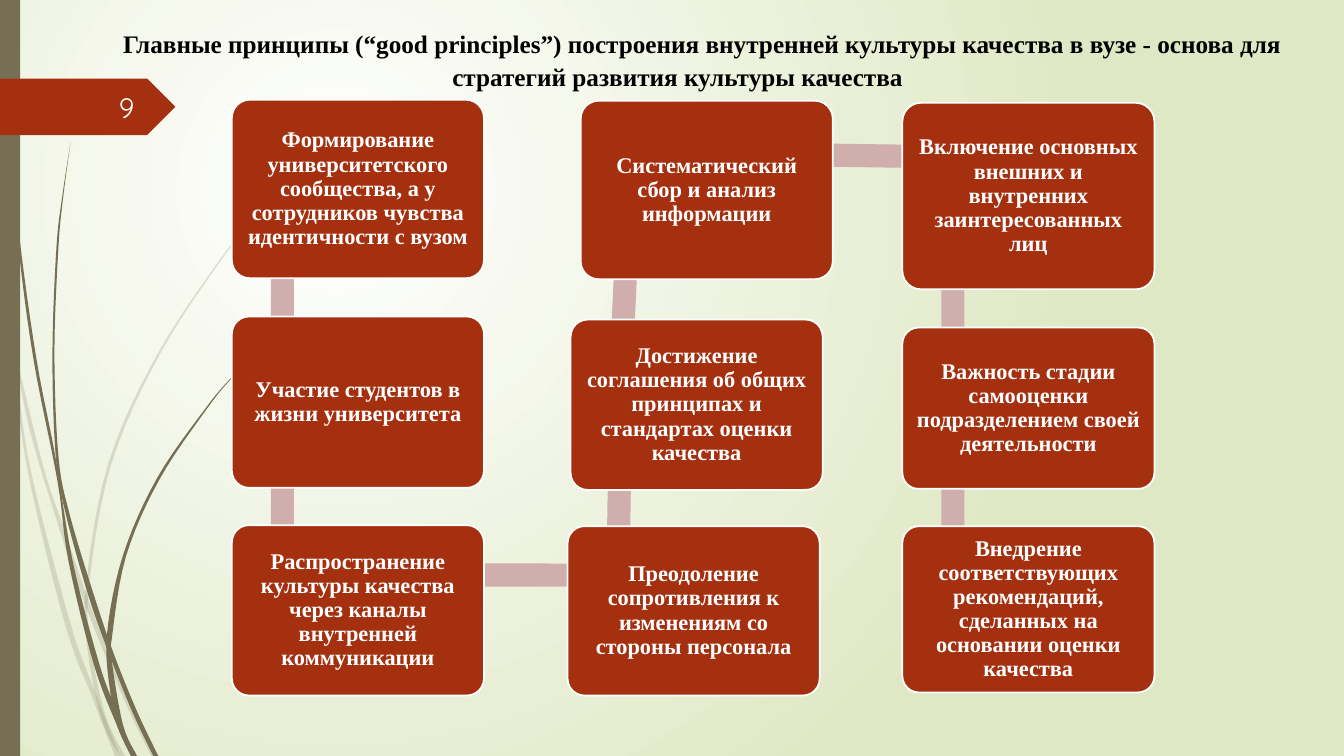
from math import atan2, degrees, hypot
from lxml.etree import SubElement
from pptx import Presentation
from pptx.dml.color import RGBColor
from pptx.enum.shapes import MSO_SHAPE
from pptx.enum.text import MSO_ANCHOR, PP_ALIGN
from pptx.oxml.ns import qn
from pptx.util import Inches, Pt

TITLE = ("Главные принципы (“good principles”) построения внутренней культуры "
         "качества в вузе - основа для стратегий развития культуры качества")
PRINCIPLES = [
    ("Формирование университетского сообщества, а у сотрудников чувства идентичности с вузом", 2.3, 0.99, 1.77),
    ("Участие студентов в жизни университета", 2.3, 3.14, 1.7),
    ("Распространение культуры качества через каналы внутренней коммуникации", 2.3, 5.21, 1.69),
    ("Преодоление сопротивления к изменениям со стороны персонала", 5.63, 5.22, 1.68),
    ("Достижение соглашения об общих принципах и стандартах оценки качества", 5.66, 3.17, 1.69),
    ("Систематический сбор и анализ информации", 5.76, 1, 1.77),
    ("Включение основных внешних и внутренних заинтересованных лиц", 8.95, 1.02, 1.85),
    ("Важность стадии самооценки подразделением своей деятельности", 8.95, 3.25, 1.6),
    ("Внедрение соответствующих рекомендаций, сделанных на основании оценки качества", 8.95, 5.22, 1.65),
]
BOX_WIDTH = 2.5
LINK_THICKNESS = 0.23
RUST, OLIVE, PINK, WHITE = "A53010", "766F54", "CFAEAB", "FFFFFF"

PALE_STRANDS = [
    ([(0, 2.99), (0.1, 3.44), (0.28, 4.7), (0.65, 6.21), (0.92, 6.93), (1.14, 7.5)],
     [(0, 2.82), (0.09, 3.22), (0.17, 3.76), (0.31, 4.69), (0.7, 6.19), (0.93, 6.83), (1.19, 7.5)]),
    ([(0.14, 3.45), (0.29, 4.25), (0.58, 5.22), (0.84, 5.99), (1.23, 6.94), (1.5, 7.5)],
     [(0.14, 3.45), (0.43, 4.63), (0.62, 5.2), (0.92, 6.07), (1.27, 6.92), (1.55, 7.5)]),
    ([(3.12, 1.53), (2.68, 1.97), (2.28, 2.44), (1.58, 3.48), (1.07, 4.61), (0.85, 5.84),
      (0.87, 6.46), (1.01, 7.14), (1.19, 7.5)],
     [(3.12, 1.54), (2.68, 1.98), (2.29, 2.45), (1.6, 3.49), (1.1, 4.62), (0.88, 5.84),
      (0.91, 6.46), (1.05, 7.11), (1.24, 7.5)]),
]
DARK_STRANDS = [
    ([(0.03, 0), (0.07, 1.1), (0.17, 2.33), (0.33, 3.55), (0.57, 4.77), (0.68, 5.57),
      (0.93, 6.59), (1.17, 7.22), (1.3, 7.5)],
     [(0.04, 0), (0.08, 1.09), (0.19, 2.32), (0.36, 3.55), (0.55, 4.53), (0.72, 5.56),
      (0.98, 6.57), (1.16, 7.06), (1.33, 7.5)]),
    ([(0.7, 1.41), (0.62, 1.93), (0.56, 2.45), (0.52, 3.49), (0.55, 4.49), (0.64, 5.05),
      (0.88, 5.92), (1.11, 6.56), (1.32, 7.08), (1.52, 7.5)],
     [(0.7, 1.41), (0.63, 1.93), (0.58, 2.45), (0.54, 3.49), (0.58, 4.53), (0.69, 5.1),
      (0.93, 5.9), (1.13, 6.49), (1.36, 7.06), (1.57, 7.5)]),
    ([(2.6, 3.44), (2.31, 3.73), (2.04, 4.05), (1.56, 4.74), (1.22, 5.51), (1.06, 6.31),
      (1.1, 6.91), (1.17, 7.22), (1.3, 7.5)],
     [(2.61, 3.44), (2.31, 3.74), (2.05, 4.06), (1.58, 4.76), (1.25, 5.52), (1.11, 6.33),
      (1.11, 6.56), (1.22, 7.19), (1.36, 7.5)]),
]


def color(value):
    return RGBColor.from_string(value)


def paint(shape, fill, line=None):
    shape.shadow.inherit = False
    shape.fill.solid()
    shape.fill.fore_color.rgb = color(fill)
    if line:
        shape.line.color.rgb = color(line)
        shape.line.width = Pt(1.25)
    else:
        shape.line.fill.background()


def add_block(kind, left, top, width, height, fill, line=None):
    block = page.shapes.add_shape(kind, Inches(left), Inches(top), Inches(width), Inches(height))
    paint(block, fill, line)
    return block


def write(shape, text, tint, font, align=PP_ALIGN.CENTER, spacing=1.0, margin=None):
    frame = shape.text_frame
    frame.word_wrap = True
    frame.vertical_anchor = MSO_ANCHOR.MIDDLE
    if margin is not None:
        for side in ("left", "top", "right", "bottom"):
            setattr(frame, f"margin_{side}", Inches(margin))
    para = frame.paragraphs[0]
    para.alignment = align
    para.line_spacing = spacing
    span = para.add_run()
    span.text = text
    for name, value in font.items():
        setattr(span.font, name, value)
    span.font.color.rgb = color(tint)
    return para


def smooth(points, steps=6):
    padded = [points[0], *points, points[-1]]
    curve = []
    for a, b, c, d in zip(padded, padded[1:], padded[2:], padded[3:]):
        for step in range(steps):
            t = step / steps
            curve.append(tuple(
                0.5 * (2 * q + (r - p) * t + (2 * p - 5 * q + 4 * r - s) * t ** 2
                       + (3 * q - p - 3 * r + s) * t ** 3)
                for p, q, r, s in zip(a, b, c, d)))
    return curve + [points[-1]]


def add_strand(near_edge, far_edge, opacity):
    outline = [(Inches(x), Inches(y)) for x, y in smooth(near_edge) + smooth(far_edge)[::-1]]
    builder = page.shapes.build_freeform(*outline[0])
    builder.add_line_segments(outline[1:], close=True)
    strand = builder.convert_to_shape()
    paint(strand, OLIVE)
    if opacity < 100:
        tint = strand._element.spPr.find(qn("a:solidFill")).find(qn("a:srgbClr"))
        SubElement(tint, qn("a:alpha")).set("val", str(opacity * 1000))


def add_background():
    fill = page.background.fill
    fill.gradient()
    for stop, position, tint in zip(fill.gradient_stops, (0, 1), (WHITE, "DFE8C4")):
        stop.position = position
        stop.color.rgb = color(tint)
    gradient = next(page._element.iter(qn("a:gradFill")))
    for linear in gradient.findall(qn("a:lin")):
        gradient.remove(linear)
    radial = SubElement(gradient, qn("a:path"))
    radial.set("path", "circle")
    focus = SubElement(radial, qn("a:fillToRect"))
    for side, value in {"l": 50000, "t": 50000, "r": 100000, "b": 100000}.items():
        focus.set(side, str(value))


def add_link(start, end):
    (x1, y1), (x2, y2) = start, end
    length = hypot(x2 - x1, y2 - y1)
    link = add_block(MSO_SHAPE.RECTANGLE, (x1 + x2 - length) / 2,
                     (y1 + y2 - LINK_THICKNESS) / 2, length, LINK_THICKNESS, PINK)
    link.rotation = degrees(atan2(y2 - y1, x2 - x1)) % 360


deck = Presentation()
deck.slide_width, deck.slide_height = Inches(13.33), Inches(7.5)
page = deck.slides.add_slide(deck.slide_layouts[5])
add_background()

for strands, opacity in ((PALE_STRANDS, 20), (DARK_STRANDS, 100)):
    for near_edge, far_edge in strands:
        add_strand(near_edge, far_edge, opacity)
add_block(MSO_SHAPE.RECTANGLE, 0, 0, 0.2, 7.5, OLIVE)
add_block(MSO_SHAPE.PENTAGON, 0, 0.78, 1.74, 0.56, RUST)
number = page.shapes.add_textbox(Inches(0.58), Inches(0.86), Inches(0.85), Inches(0.4))
write(number, "9", "FEFFFF", {"name": "Quicksand", "size": Pt(20)}, PP_ALIGN.RIGHT)

anchors = [(left + 0.5, top + 0.29 * height) for _, left, top, height in PRINCIPLES]
for start, end in zip(anchors, anchors[1:]):
    add_link(start, end)

box_font = {"name": "Times New Roman", "size": Pt(16), "bold": True}
for text, left, top, height in PRINCIPLES:
    box = add_block(MSO_SHAPE.ROUNDED_RECTANGLE, left, top, BOX_WIDTH, height, RUST, WHITE)
    box.adjustments[0] = 0.1
    write(box, text, WHITE, box_font, spacing=0.9, margin=0.07)

title = page.shapes.title
title.left, title.top, title.width, title.height = map(Inches, (0.58, 0.21, 12.28, 0.75))
heading = write(title, TITLE, "000000", {**box_font, "size": Pt(18)}, spacing=1.07)
heading._p.get_or_add_pPr().set("indent", str(Inches(0.49)))

deck.save("out.pptx")
